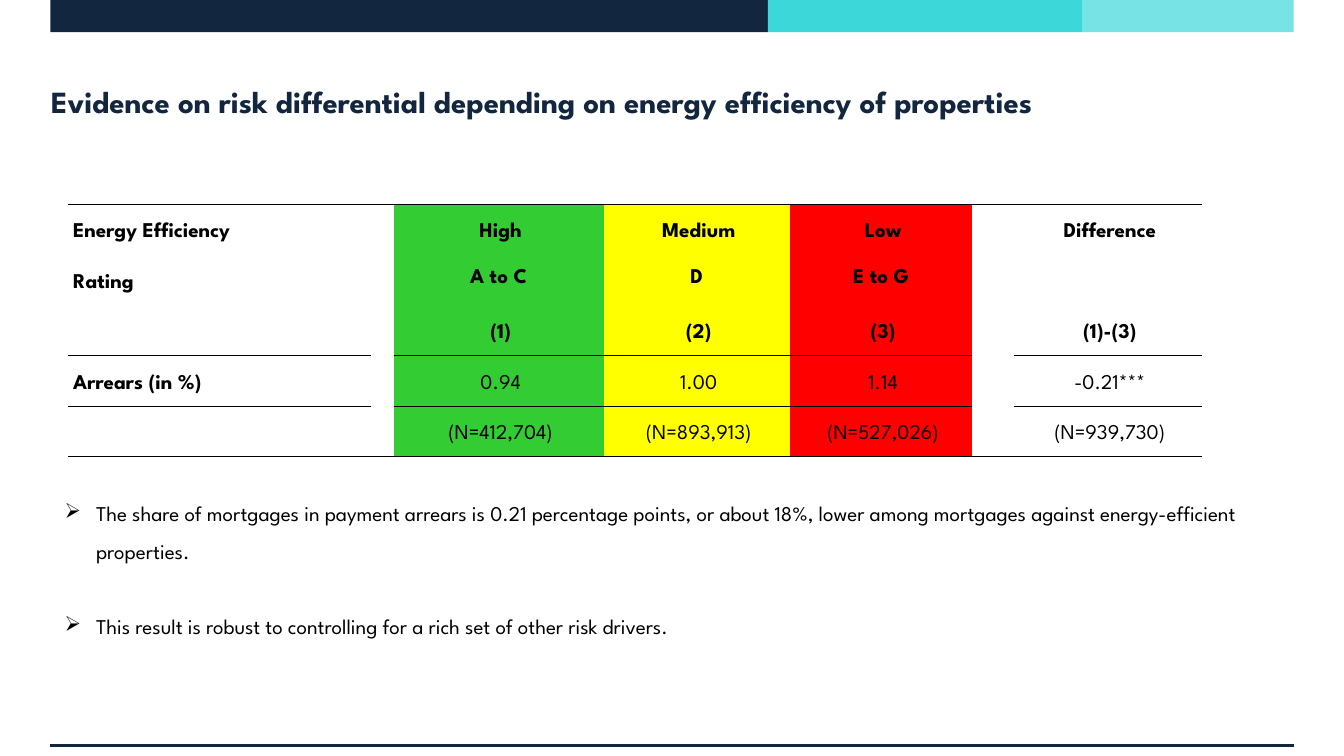
from dataclasses import dataclass

from lxml import etree
from pptx import Presentation
from pptx.dml.color import RGBColor
from pptx.enum.shapes import MSO_CONNECTOR as CONN, MSO_SHAPE as SHAPE
from pptx.enum.text import MSO_ANCHOR as ANCHOR, MSO_AUTO_SIZE as AUTO, PP_ALIGN as ALIGN
from pptx.oxml import parse_xml
from pptx.oxml.ns import nsdecls, qn
from pptx.util import Pt


@dataclass(frozen=True)
class Theme:
    font: str = "League Spartan"
    navy: str = "12273F"
    teal: str = "3CD7D9"
    aqua: str = "77E3E4"
    black: str = "000000"
    white: str = "FFFFFF"
    green: str = "33CC33"
    yellow: str = "FFFF00"
    red: str = "FF0000"
    title: int = 22
    body: int = 15


T = Theme()


def write(p, text, size=T.body, color=T.black, bold=False, **paragraph):
    r = p.add_run()
    r.text = text
    for name, value in dict(name=T.font, size=Pt(size), bold=bold).items():
        setattr(r.font, name, value)
    r.font.color.rgb = RGBColor.from_string(color)
    for name, value in paragraph.items():
        setattr(p, name, value)


def add_border(cell, side, width):
    cell._tc.get_or_add_tcPr().append(parse_xml(
        f'<a:ln{side} {nsdecls("a")} w="{Pt(width)}"><a:solidFill>'
        f'<a:srgbClr val="{T.black}"/></a:solidFill></a:ln{side}>'))


prs = Presentation()
prs.slide_width, prs.slide_height = Pt(960), Pt(540)
s = prs.slides.add_slide(prs.slide_layouts[5])

# Header bands and footer rule
for left, right, color in [(36, 548.5, T.navy), (548.5, 773, T.teal), (773, 924, T.aqua)]:
    band = s.shapes.add_shape(SHAPE.RECTANGLE, Pt(left), 0, Pt(right - left), Pt(23))
    band.shadow.inherit = False
    band.fill.solid()
    band.fill.fore_color.rgb = RGBColor.from_string(color)
    band.line.fill.background()

rule = s.shapes.add_connector(CONN.STRAIGHT, Pt(36), Pt(532.5), Pt(924), Pt(532.5))
rule.line.width = Pt(2.25)
rule.line.color.rgb = RGBColor.from_string(T.navy)
etree.SubElement(rule._element.spPr, qn("a:effectLst"))

# Title
title = s.shapes.title
title.left, title.top, title.width, title.height = Pt(36.5), Pt(36), Pt(923), Pt(72)
tf = title.text_frame
frame = dict(margin_left=0, margin_right=0, margin_top=0, margin_bottom=0,
             vertical_anchor=ANCHOR.MIDDLE, auto_size=AUTO.NONE, word_wrap=True)
for name, value in frame.items():
    setattr(tf, name, value)
write(tf.paragraphs[0],
      "Evidence on risk differential depending on energy efficiency of properties",
      T.title, T.navy, True, alignment=ALIGN.LEFT)

# Arrears table; empty columns separate the label and the difference
rows = [
    ["Energy Efficiency", "", "High", "Medium", "Low", "", "Difference"],
    ["Rating", "", "A to C", "D", "E to G", "", ""],
    ["", "", "(1)", "(2)", "(3)", "", "(1)-(3)"],
    ["Arrears (in %)", "", "0.94", "1.00", "1.14", "", "-0.21***"],
    ["", "", "(N=412,704)", "(N=893,913)", "(N=527,026)", "", "(N=939,730)"],
]
widths = [216.5, 16, 150, 133, 130.5, 29.5, 134.5]
fills = [T.white, T.white, T.green, T.yellow, T.red, T.white, T.white]
gaps = (1, 5)
row_height = 36

shape = s.shapes.add_table(len(rows), len(widths), Pt(48.7), Pt(146),
                           Pt(sum(widths)), Pt(row_height * len(rows)))
table = shape.table
table.first_row = table.horz_banding = False
# The built-in "No Style, No Grid" table style
table._tbl.tblPr.find(qn("a:tableStyleId")).text = "{2D5ABB26-0587-4C30-8999-92F81FD0307C}"
for column, width in zip(table.columns, widths):
    column.width = Pt(width)

for i, row in enumerate(rows):
    table.rows[i].height = Pt(row_height)
    for j, text in enumerate(row):
        cell = table.cell(i, j)
        if i == 0:
            add_border(cell, "T", 1)
        if i == 3 and j not in gaps:
            add_border(cell, "T", 0.5)
        if i == 2 and j not in gaps:
            add_border(cell, "B", 0.5)
        if i == 4:
            add_border(cell, "B", 1)
        cell.fill.solid()
        cell.fill.fore_color.rgb = RGBColor.from_string(fills[j])
        layout = dict(margin_left=Pt(0.7), margin_right=Pt(0.7), margin_top=Pt(0.7),
                      margin_bottom=Pt(2.9), vertical_anchor=ANCHOR.MIDDLE)
        for name, value in layout.items():
            setattr(cell, name, value)
        if not text:
            continue
        p = cell.text_frame.paragraphs[0]
        write(p, text, bold=i < 3 or j == 0, alignment=ALIGN.CENTER if j else ALIGN.LEFT)
        if i != 1 or j == 0:
            p.line_spacing = 1.5
            p.space_before = p.space_after = Pt(6)
            p._p.get_or_add_pPr().set("marL", str(Pt(2.9)))

# Findings
findings = [
    "The share of mortgages in payment arrears is 0.21 percentage points, or about 18%, "
    "lower among mortgages against energy-efficient properties.",
    "This result is robust to controlling for a rich set of other risk drivers.",
]
tf = s.shapes.add_textbox(Pt(39), Pt(345), Pt(857.5), Pt(116.5)).text_frame
tf.word_wrap = True
for i, text in enumerate(findings):
    p = tf.add_paragraph() if i else tf.paragraphs[0]
    pPr = p._p.get_or_add_pPr()
    pPr.set("marL", str(Pt(22.5)))
    pPr.set("indent", str(-Pt(22.5)))
    etree.SubElement(pPr, qn("a:buChar"), char="➢")
    write(p, text, line_spacing=1.5)
    if i:
        p.space_before = Pt(27)

prs.save("out.pptx")
